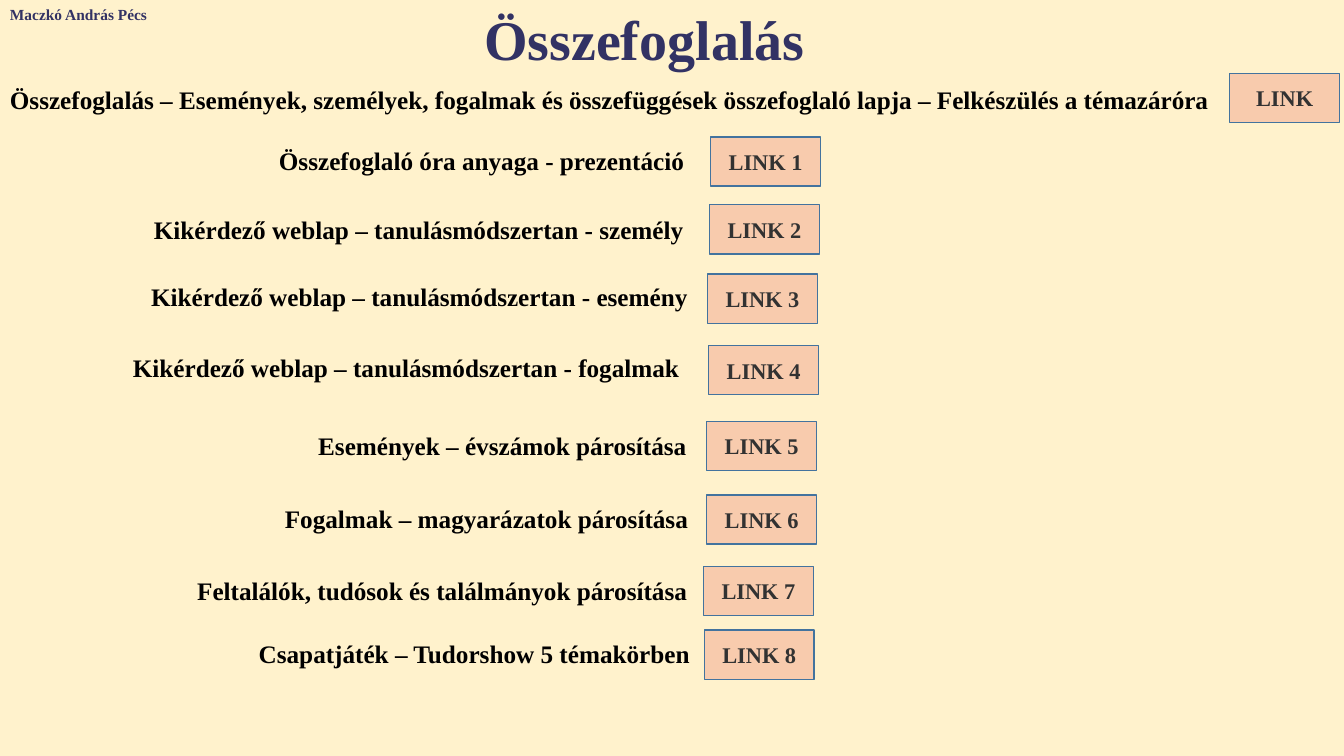
"""Build the summary slide with its list of topics and link buttons."""
from pptx import Presentation
from pptx.dml.color import RGBColor
from pptx.enum.shapes import MSO_SHAPE
from pptx.enum.text import MSO_ANCHOR, PP_ALIGN
from pptx.util import Cm, Pt

COLORS = {
    "page": "FFF2CC",
    "title": "323264",
    "text": "000000",
    "button": "F8CBAD",
    "edge": "43739E",
    "label": "323232",
}
ROWS = [
    ("Összefoglalás – Események, személyek, fogalmak és összefüggések "
     "összefoglaló lapja – Felkészülés a témazáróra", 0, 2.01, 30.89, 30.99, 1.85),
    ("Összefoglaló óra anyaga - prezentáció", 6.78, 3.53, 11.2, 17.91, 3.45),
    ("Kikérdező weblap – tanulásmódszertan - személy", 3.63, 5.28, 14.25, 17.88, 5.16),
    ("Kikérdező weblap – tanulásmódszertan - esemény", 3.56, 6.96, 14.25, 17.83, 6.91),
    ("Kikérdező weblap – tanulásmódszertan - fogalmak", 3.1, 8.76, 14.68, 17.86, 8.71),
    ("Események – évszámok párosítása", 7.77, 10.72, 10.03, 17.81, 10.62),
    ("Fogalmak – magyarázatok párosítása", 6.93, 12.57, 10.85, 17.81, 12.47),
    ("Feltalálók, tudósok és találmányok párosítása", 4.72, 14.38, 12.98, 17.73, 14.27),
    ("Csapatjáték – Tudorshow 5 témakörben", 6.27, 15.95, 11.46, 17.75, 15.88),
]


def write(shape, text, size, color, align=PP_ALIGN.LEFT):
    frame = shape.text_frame
    frame.word_wrap = True
    para = frame.paragraphs[0]
    para.text = text
    para.alignment = align
    font = para.font
    font.name = "Times New Roman"
    font.size = Pt(size)
    font.bold = True
    font.color.rgb = RGBColor.from_string(COLORS[color])


deck = Presentation()
deck.slide_width, deck.slide_height = Cm(33.87), Cm(19.05)
slide = deck.slides.add_slide(deck.slide_layouts[6])
slide.background.fill.solid()
slide.background.fill.fore_color.rgb = RGBColor.from_string(COLORS["page"])
shapes = slide.shapes

title = shapes.add_textbox(Cm(4.9), Cm(0), Cm(22.68), Cm(1.96))
write(title, "Összefoglalás", 40, "title", PP_ALIGN.CENTER)
author = shapes.add_textbox(Cm(0), Cm(0), Cm(4.04), Cm(0.74))
write(author, "Maczkó András Pécs", 11, "title")

for num, (topic, left, top, width, link_x, link_y) in enumerate(ROWS):
    box = shapes.add_textbox(Cm(left), Cm(top), Cm(width), Cm(1.02))
    write(box, topic, 18, "text")

    button = shapes.add_shape(MSO_SHAPE.RECTANGLE, Cm(link_x), Cm(link_y), Cm(2.77), Cm(1.24))
    button.shadow.inherit = False
    button.fill.solid()
    button.fill.fore_color.rgb = RGBColor.from_string(COLORS["button"])
    button.line.color.rgb = RGBColor.from_string(COLORS["edge"])
    button.line.width = Pt(1)
    button.text_frame.vertical_anchor = MSO_ANCHOR.MIDDLE
    write(button, f"LINK {num}" if num else "LINK", 16, "label", PP_ALIGN.CENTER)

deck.save("out.pptx")
